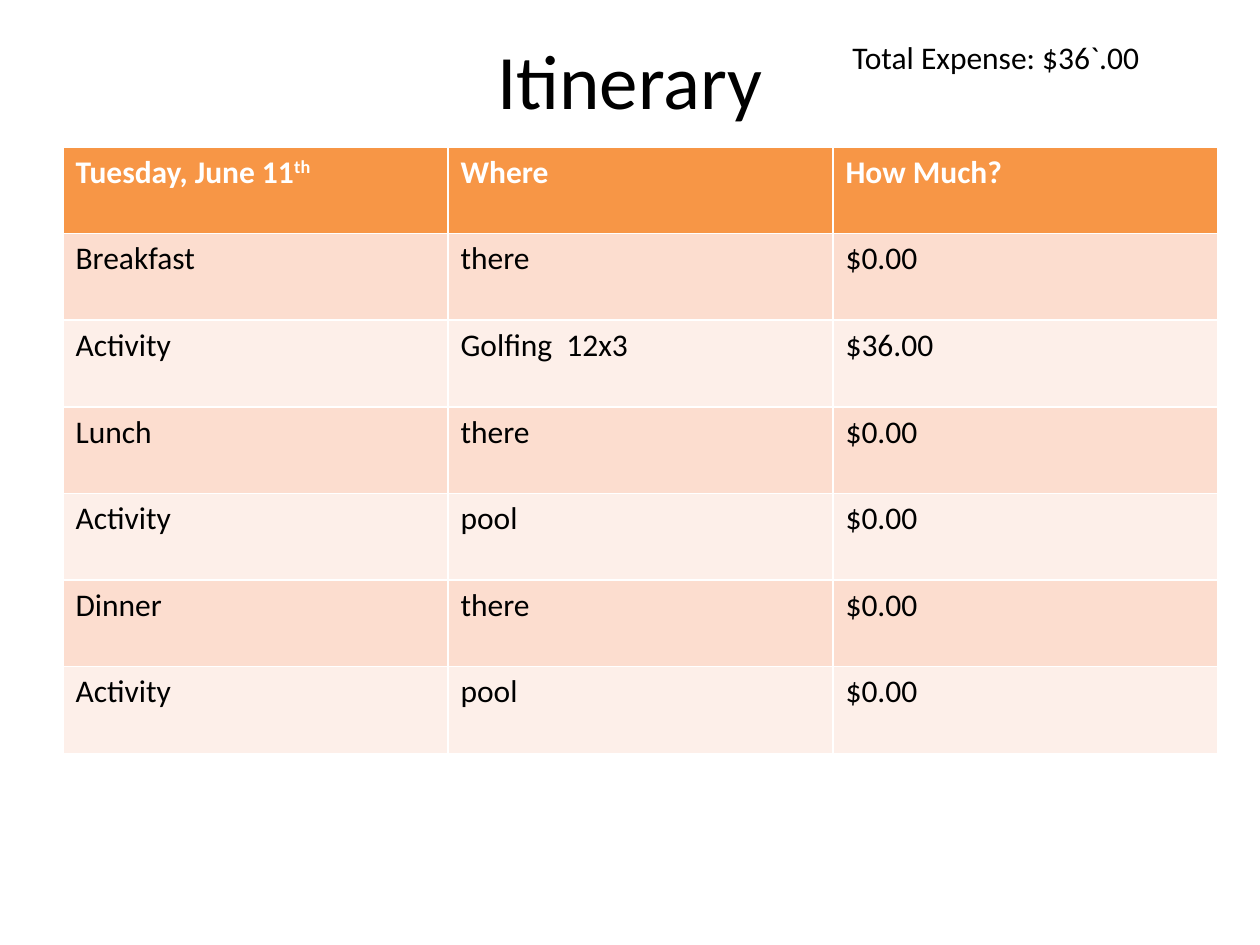
from pptx import Presentation
from pptx.dml.color import RGBColor
from pptx.enum.text import MSO_ANCHOR, PP_ALIGN
from pptx.util import Pt

CENTER = PP_ALIGN.CENTER
MIDDLE = MSO_ANCHOR.MIDDLE
BLACK = RGBColor(0x00, 0x00, 0x00)
WHITE = RGBColor(0xFF, 0xFF, 0xFF)
ORANGE = RGBColor(0xF7, 0x96, 0x46)
BANDS = (RGBColor(0xFD, 0xEF, 0xE9), RGBColor(0xFC, 0xDD, 0xCF))
FONT = "Calibri"

TITLE = "Itinerary"
TOTAL = "Total Expense: $36`.00"
DATE_SUFFIX = "th"
ROWS = [
    ("Tuesday, June 11", "Where", "How Much?"),
    ("Breakfast", "there", "$0.00"),
    ("Activity", "Golfing  12x3", "$36.00"),
    ("Lunch", "there", "$0.00"),
    ("Activity", "pool", "$0.00"),
    ("Dinner", "there", "$0.00"),
    ("Activity", "pool", "$0.00"),
]
COL_W, ROW_H = 220, 49.5


def style(p, size, color, bold=False):
    p.font.name = FONT
    p.font.size = Pt(size)
    p.font.bold = bold
    p.font.color.rgb = color


prs = Presentation()
prs.slide_width, prs.slide_height = Pt(720), Pt(540)
s = prs.slides.add_slide(prs.slide_layouts[5])

title = s.shapes.title
title.left, title.top, title.width, title.height = Pt(36), Pt(0), Pt(648), Pt(90)
tf = title.text_frame
tf.text = TITLE
tf.vertical_anchor = MIDDLE
tf.paragraphs[0].alignment = CENTER
style(tf.paragraphs[0], 44, BLACK)

tf = s.shapes.add_textbox(Pt(480), Pt(18), Pt(222), Pt(29)).text_frame
tf.word_wrap = True
tf.text = TOTAL
style(tf.paragraphs[0], 18, BLACK)

n_rows, n_cols = len(ROWS), len(ROWS[0])
table = s.shapes.add_table(n_rows, n_cols, Pt(36), Pt(84),
                           Pt(COL_W * n_cols), Pt(ROW_H * n_rows)).table
for col in table.columns:
    col.width = Pt(COL_W)
for i, row in enumerate(ROWS):
    table.rows[i].height = Pt(ROW_H)
    header = i == 0
    for j, text in enumerate(row):
        cell = table.cell(i, j)
        cell.fill.solid()
        cell.fill.fore_color.rgb = ORANGE if header else BANDS[i % 2]
        cell.text = text
        style(cell.text_frame.paragraphs[0], 18, WHITE if header else BLACK, header)

r = table.cell(0, 0).text_frame.paragraphs[0].add_run()
r.text = DATE_SUFFIX
r._r.get_or_add_rPr().set("baseline", "30000")

prs.save("out.pptx")
